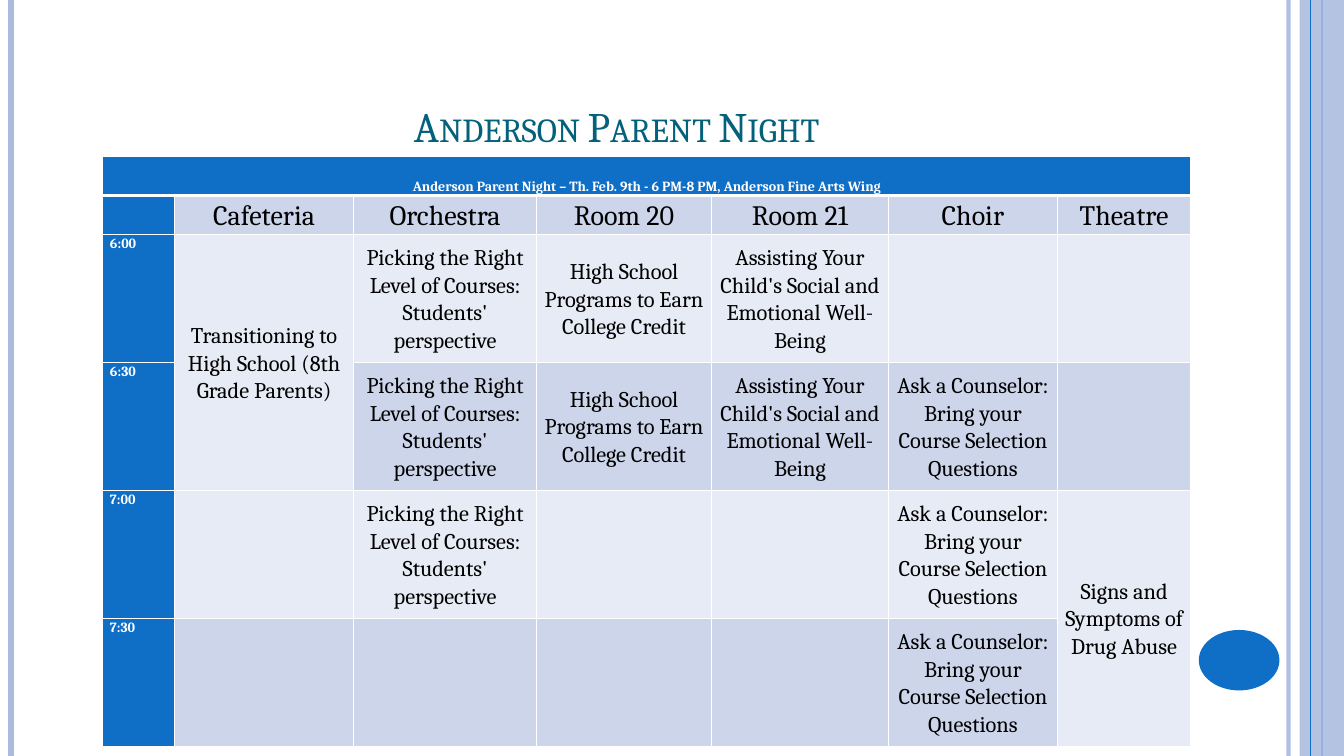
from lxml import etree
from pptx import Presentation
from pptx.dml.color import RGBColor
from pptx.enum.shapes import MSO_CONNECTOR, MSO_SHAPE
from pptx.enum.text import MSO_ANCHOR, PP_ALIGN
from pptx.oxml.ns import qn
from pptx.util import Inches, Pt

BLUE = RGBColor(0x0F, 0x6F, 0xC6)
LAVENDER = RGBColor(0xAB, 0xBB, 0xDF)
TEAL = RGBColor(0x04, 0x61, 0x7B)
DARK_BAND = RGBColor(0xCC, 0xD5, 0xEA)
LIGHT_BAND = RGBColor(0xE7, 0xEB, 0xF5)
WHITE = RGBColor(0xFF, 0xFF, 0xFF)
BLACK = RGBColor(0, 0, 0)

STRAIGHT = MSO_CONNECTOR.STRAIGHT
RECTANGLE, OVAL = MSO_SHAPE.RECTANGLE, MSO_SHAPE.OVAL
TOP, MIDDLE, BOTTOM = MSO_ANCHOR.TOP, MSO_ANCHOR.MIDDLE, MSO_ANCHOR.BOTTOM
LEFT, CENTER = PP_ALIGN.LEFT, PP_ALIGN.CENTER

FONT = "Cambria"
PAGE_HEIGHT = 7.5
COLUMN_WIDTHS = [0.71, 1.78, 1.81, 1.74, 1.75, 1.68, 1.32]
ROW_HEIGHTS = [0.39, 0.39, 1.27, 1.27, 1.27, 1.27]

BANNER = "Anderson Parent Night – Th. Feb. 9th - 6 PM-8 PM, Anderson Fine Arts Wing"
COURSES = "Picking the Right Level of Courses: Students' perspective"
CREDIT = "High School Programs to Earn College Credit"
WELL_BEING = "Assisting Your Child's Social and Emotional Well-Being"
COUNSELOR = "Ask a Counselor: Bring your Course Selection Questions"
TRANSITION = "Transitioning to High School (8th Grade Parents)"
DRUG_ABUSE = "Signs and Symptoms of Drug Abuse"
SCHEDULE = [
    [BANNER, "", "", "", "", "", ""],
    ["", "Cafeteria", "Orchestra", "Room 20", "Room 21", "Choir", "Theatre"],
    ["6:00", TRANSITION, COURSES, CREDIT, WELL_BEING, "", ""],
    ["6:30", "", COURSES, CREDIT, WELL_BEING, COUNSELOR, ""],
    ["7:00", "", COURSES, "", "", COUNSELOR, DRUG_ABUSE],
    ["7:30", "", "", "", "", COUNSELOR, ""],
]
MERGES = [((0, 0), (0, 6)), ((2, 1), (3, 1)), ((4, 6), (5, 6))]


def set_opacity(item, percent):
    for color in item._element.iter(qn("a:srgbClr")):
        etree.SubElement(color, qn("a:alpha"), val=str(percent * 1000))


def add_rule(page, x, color, width, opacity=100):
    """Draw a vertical line over the full height of the page."""
    rule = page.shapes.add_connector(
        STRAIGHT, Inches(x), 0, Inches(x), Inches(PAGE_HEIGHT))
    rule.line.color.rgb = color
    rule.line.width = Pt(width)
    if opacity < 100:
        set_opacity(rule, opacity)
    etree.SubElement(rule._element.spPr, qn("a:effectLst"))


def add_block(page, kind, left, top, width, height, color, opacity=100):
    block = page.shapes.add_shape(
        kind, Inches(left), Inches(top), Inches(width), Inches(height))
    block.shadow.inherit = False
    block.fill.solid()
    block.fill.fore_color.rgb = color
    block.line.fill.background()
    if opacity < 100:
        set_opacity(block, opacity)


def write(frame, text, size, color, bold=False, align=CENTER, spacing=1.0,
          small_caps=False):
    para = frame.paragraphs[0]
    para.alignment = align
    para.line_spacing = spacing
    para.font.size = Pt(size)
    if not text:
        return
    span = para.add_run()
    span.text = text
    span.font.name = FONT
    span.font.size = Pt(size)
    span.font.bold = bold
    span.font.color.rgb = color
    if small_caps:
        span.font._element.set("cap", "small")


def add_title(page, text):
    box = page.shapes.add_textbox(
        Inches(0.67), Inches(0.3), Inches(10.89), Inches(1.25))
    box.text_frame.word_wrap = True
    box.text_frame.vertical_anchor = BOTTOM
    write(box.text_frame, text, size=30, color=TEAL, small_caps=True)


def add_borders(cell, widths):
    """Give the cell white borders; widths maps each side to points."""
    properties = cell._tc.get_or_add_tcPr()
    for side in ("L", "R", "T", "B"):
        border = etree.SubElement(
            properties, qn(f"a:ln{side}"), w=str(Pt(widths.get(side, 1))))
        fill = etree.SubElement(border, qn("a:solidFill"))
        etree.SubElement(fill, qn("a:srgbClr"), val=str(WHITE))


def format_cell(cell, text, row, column):
    add_borders(cell, {0: {"B": 3}, 1: {"T": 3}}.get(row, {}))
    is_label = row == 0 or column == 0
    band = DARK_BAND if row % 2 else LIGHT_BAND
    cell.fill.solid()
    cell.fill.fore_color.rgb = BLUE if is_label else band
    cell.margin_left = cell.margin_right = Inches(0.07)
    cell.margin_top = cell.margin_bottom = 0
    if row == 0:
        cell.vertical_anchor = BOTTOM
    else:
        cell.vertical_anchor = TOP if is_label else MIDDLE
    size = 10 if is_label else 20 if row == 1 else 16
    write(cell.text_frame, text, size=size, bold=is_label, spacing=1.07,
          color=WHITE if is_label else BLACK,
          align=LEFT if column == 0 and row > 0 else CENTER)


def add_schedule(page):
    table = page.shapes.add_table(
        len(ROW_HEIGHTS), len(COLUMN_WIDTHS), Inches(1.02), Inches(1.55),
        Inches(sum(COLUMN_WIDTHS)), Inches(sum(ROW_HEIGHTS))).table
    table.first_row = False
    table.horz_banding = False
    for column, width in zip(table.columns, COLUMN_WIDTHS):
        column.width = Inches(width)
    for row, height in zip(table.rows, ROW_HEIGHTS):
        row.height = Inches(height)
    for row, texts in enumerate(SCHEDULE):
        for column, text in enumerate(texts):
            format_cell(table.cell(row, column), text, row, column)
    for first, last in MERGES:
        table.cell(*first).merge(table.cell(*last))


def main():
    deck = Presentation()
    deck.slide_width = Inches(13.33)
    deck.slide_height = Inches(PAGE_HEIGHT)
    page = deck.slides.add_slide(deck.slide_layouts[6])
    add_rule(page, 12.78, LAVENDER, 3, opacity=93)
    add_rule(page, 0.11, LAVENDER, 4.5)
    add_rule(page, 13.11, BLUE, 1.5)
    add_block(page, RECTANGLE, 12.89, 0, 0.44, PAGE_HEIGHT, LAVENDER, opacity=87)
    add_rule(page, 13, BLUE, 0.75)
    add_block(page, OVAL, 11.89, 6.25, 0.8, 0.6, BLUE)
    add_title(page, "Anderson Parent Night")
    add_schedule(page)
    deck.save("out.pptx")


if __name__ == "__main__":
    main()
